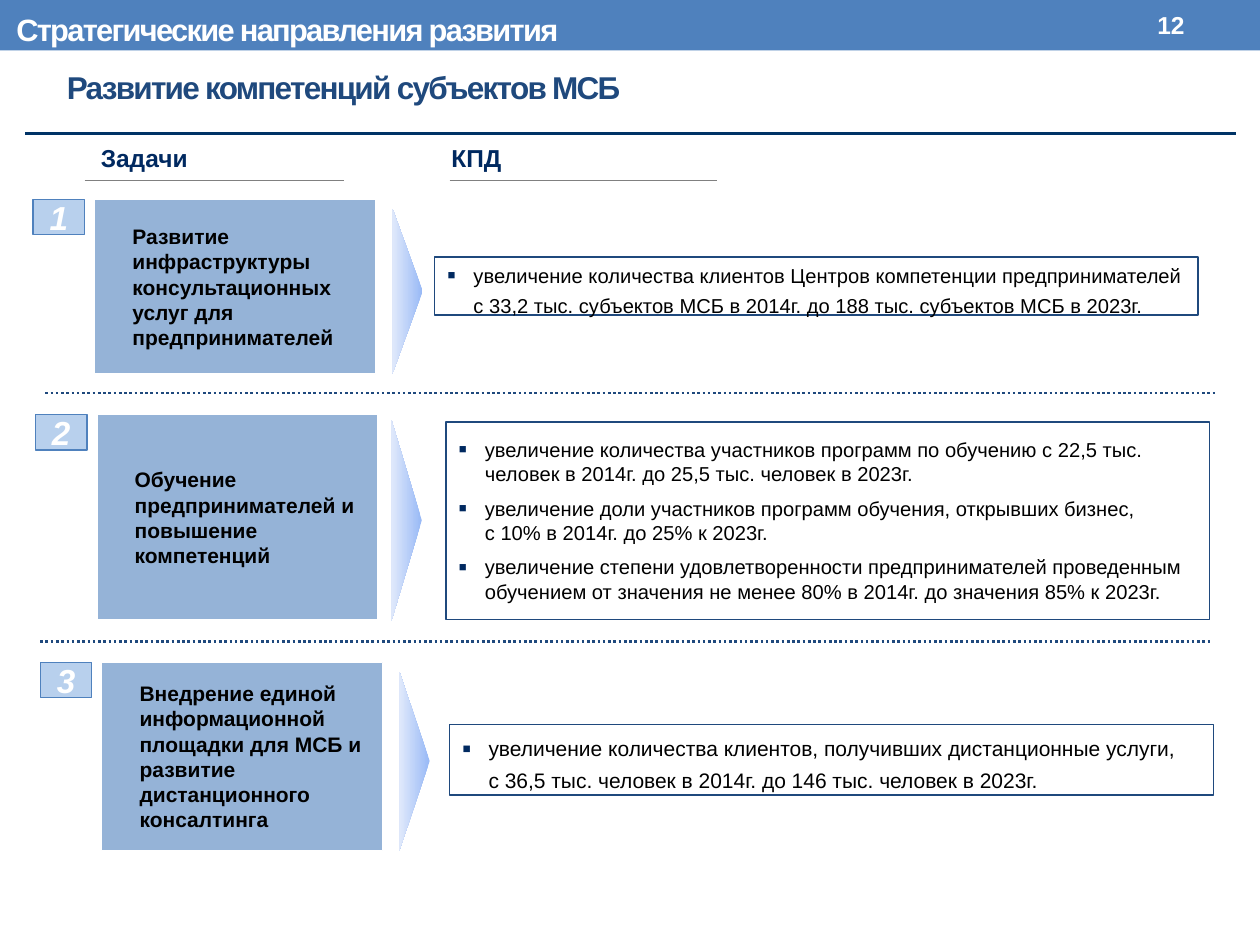
import pptx
import pptx.util
import pptx.dml.color
import pptx.enum.dml
import pptx.enum.shapes
import pptx.enum.text
import pptx.oxml
import pptx.oxml.ns
from lxml import etree

Pt = pptx.util.Pt
Shape = pptx.enum.shapes.MSO_SHAPE
Align = pptx.enum.text.PP_ALIGN
Anchor = pptx.enum.text.MSO_ANCHOR
qn = pptx.oxml.ns.qn

BLUE, NAVY, DEEP, WHITE = "4F81BD", "1F497D", "002960", "FFFFFF"
INSET = (7.2, 3.6, 7.2, 3.6)


def color(code):
    return pptx.dml.color.RGBColor.from_string(code)


def add(parent, tag, **attrs):
    return etree.SubElement(parent, qn(tag), attrs)


def bullet(para):
    props = para._p.get_or_add_pPr()
    add(add(props, "a:buClr"), "a:srgbClr", val=DEEP)
    add(props, "a:buSzPct", val="125000")
    add(props, "a:buFont", typeface="Arial")
    add(props, "a:buChar", char="▪")


def write(shape, *texts, size=12, tone="000000", bold=False, italic=False,
          align=Align.LEFT, anchor=Anchor.MIDDLE, inset=INSET, left=0,
          hang=0, after=0, lead=None, track=0, marks=False):
    """Fill a shape with one paragraph per text."""
    frame = shape.text_frame
    frame.word_wrap = True
    frame.auto_size = pptx.enum.text.MSO_AUTO_SIZE.NONE
    frame.vertical_anchor = anchor
    (frame.margin_left, frame.margin_top,
     frame.margin_right, frame.margin_bottom) = map(Pt, inset)
    for i, text in enumerate(texts):
        para = frame.add_paragraph() if i else frame.paragraphs[0]
        para.text = text
        para.alignment = align
        props = para._p.get_or_add_pPr()
        props.set("marL", str(Pt(left)))
        props.set("indent", str(Pt(-hang)))
        if marks:
            bullet(para)
        para.space_before, para.space_after = Pt(0), Pt(after)
        if lead:
            para.line_spacing = lead
        for run in para.runs:
            font = run.font
            font.name, font.size = "Arial", Pt(size)
            font.bold, font.italic = bold, italic
            font.color.rgb = color(tone)
            if track:
                run._r.get_or_add_rPr().set("spc", str(track * 100))


def label(slide, box, text, **style):
    write(slide.shapes.add_textbox(*map(Pt, box)), text, **style)


def block(slide, box, fill=None, line=None, kind=Shape.RECTANGLE):
    shape = slide.shapes.add_shape(kind, *map(Pt, box))
    shape.shadow.inherit = False
    if fill:
        shape.fill.solid()
        shape.fill.fore_color.rgb = color(fill)
    else:
        shape.fill.background()
    if line:
        shape.line.color.rgb = color(line)
        shape.line.width = Pt(0.75)
    else:
        shape.line.fill.background()
    return shape


def rule(slide, x, y, wide, tone, width, dash=None):
    line = slide.shapes.add_connector(
        pptx.enum.shapes.MSO_CONNECTOR.STRAIGHT, Pt(x), Pt(y), Pt(x + wide), Pt(y))
    line.line.color.rgb = color(tone)
    line.line.width = Pt(width)
    if dash:
        line.line.dash_style = dash
    add(line._element.spPr, "a:effectLst")


def arrow(slide, x, y, wide, high):
    """Triangle pointing right that fills the given box."""
    box = (x + (wide - high) / 2, y + (high - wide) / 2, high, wide)
    shape = block(slide, box, kind=Shape.ISOSCELES_TRIANGLE)
    shape.rotation = 90
    shape.fill.gradient()
    shape.fill.gradient_angle = 270
    for stop, tone in zip(shape.fill.gradient_stops, ("98B9F6", "E0E9FB")):
        stop.color.rgb = color(tone)


def header(slide, x, y, wide):
    block(slide, (x, y, wide, 28.8), fill=BLUE)
    label(slide, (x + 2.2, y, 669, 33), "Стратегические направления развития",
          size=17.6, tone=WHITE, bold=True, track=-1)
    label(slide, (x + 600, y + 1.4, 84, 26), "12",
          size=14, tone=WHITE, bold=True, align=Align.RIGHT)
    title = slide.shapes.title
    title.left, title.top, title.width, title.height = map(
        Pt, (x + 31, y + 33.1, 669, 33.1))
    write(title, "Развитие компетенций субъектов МСБ",
          size=18, tone=NAVY, bold=True, track=-1)
    rule(slide, x + 14.4, y + 76.3, 692, "003366", 1.75)


def heading(slide, x, y, wide, text, shift):
    label(slide, (x + shift, y, wide, 18.7), text, size=14, tone=DEEP,
          bold=True, anchor=Anchor.BOTTOM, inset=(0, 0, 0, 1.4))
    rule(slide, x, y + 21.6, wide, "808080", 0.75)


def row(slide, x, y, high, number, task, tip, goal, goals, **style):
    """Badge, task, arrow and goals; tip and goal are offsets and height."""
    box = block(slide, (x + 35.2, y, 160.6, high), fill=BLUE, line=WHITE)
    tint = box.fill._xPr.find(qn("a:solidFill"))[0]
    add(tint, "a:alpha", val="60000")
    write(box, task, bold=True, left=7.2, inset=(14.4, 3.6, 3.6, 3.6))

    badge = block(slide, (x, y, 29.5, 20.2), fill="B8D0ED", line=BLUE)
    write(badge, str(number), size=19, tone=WHITE, bold=True, italic=True,
          align=Align.CENTER, inset=(0, 0, 0, 0))

    dx, dy, tall = tip
    arrow(slide, x + dx, y + dy, 17.3, tall)

    dx, dy, tall = goal
    box = block(slide, (x + dx, y + dy, 436.3, tall), line=NAVY)
    write(box, *goals, anchor=Anchor.TOP, left=15.1, hang=15.1,
          marks=True, **style)


def main():
    deck = pptx.Presentation()
    deck.slide_width, deck.slide_height = Pt(720), Pt(540)
    slide = deck.slides.add_slide(deck.slide_layouts[5])

    header(slide, 0, 0, 720)
    heading(slide, 48.4, 81.4, 148.3, "Задачи", 9.2)
    heading(slide, 257, 81.4, 152.6, "КПД", 0.9)

    row(slide, 18.9, 113.8, 100, 1,
        "Развитие инфраструктуры консультационных услуг для предпринимателей",
        (205.3, 5.4, 94.3), (229.5, 33.1, 33.1),
        ["увеличение количества клиентов Центров компетенции предпринимателей "
         "с 33,2 тыс. субъектов МСБ в 2014г. до 188 тыс. субъектов МСБ в 2023г."],
        size=11.5, lead=1.25, inset=(7.2, 0, 7.2, 0))
    row(slide, 20.2, 236.9, 117.4, 2,
        "Обучение предпринимателей и повышение компетенций",
        (203.5, 3.2, 114.5), (234.7, 4.3, 113),
        ["увеличение количества участников программ по обучению с 22,5 тыс. "
         "человек в 2014г. до 25,5 тыс. человек в 2023г.",
         "увеличение доли участников программ обучения, открывших бизнес, "
         "\vс 10% в 2014г. до 25% к 2023г.",
         "увеличение степени удовлетворенности предпринимателей проведенным "
         "обучением от значения не менее 80% в 2014г. до значения 85% к 2023г."],
        size=11.5, after=6, inset=(7.2, 8.6, 7.2, 8.6))
    row(slide, 23, 378.4, 107.6, 3,
        "Внедрение единой информационной площадки для МСБ и развитие "
        "дистанционного консалтинга",
        (205.2, 5.4, 102.2), (234, 35.6, 40.3),
        ["увеличение количества клиентов, получивших дистанционные услуги, "
         "\vс 36,5 тыс. человек в 2014г. до 146 тыс. человек в 2023г."],
        size=12, lead=1.25, inset=(7.2, 2.9, 7.2, 2.9))

    for x, y in ((25.9, 224.6), (23, 366.5)):
        rule(slide, x, y, 668.5, NAVY, 1.5, pptx.enum.dml.MSO_LINE.ROUND_DOT)
    deck.save("out.pptx")


if __name__ == "__main__":
    main()
